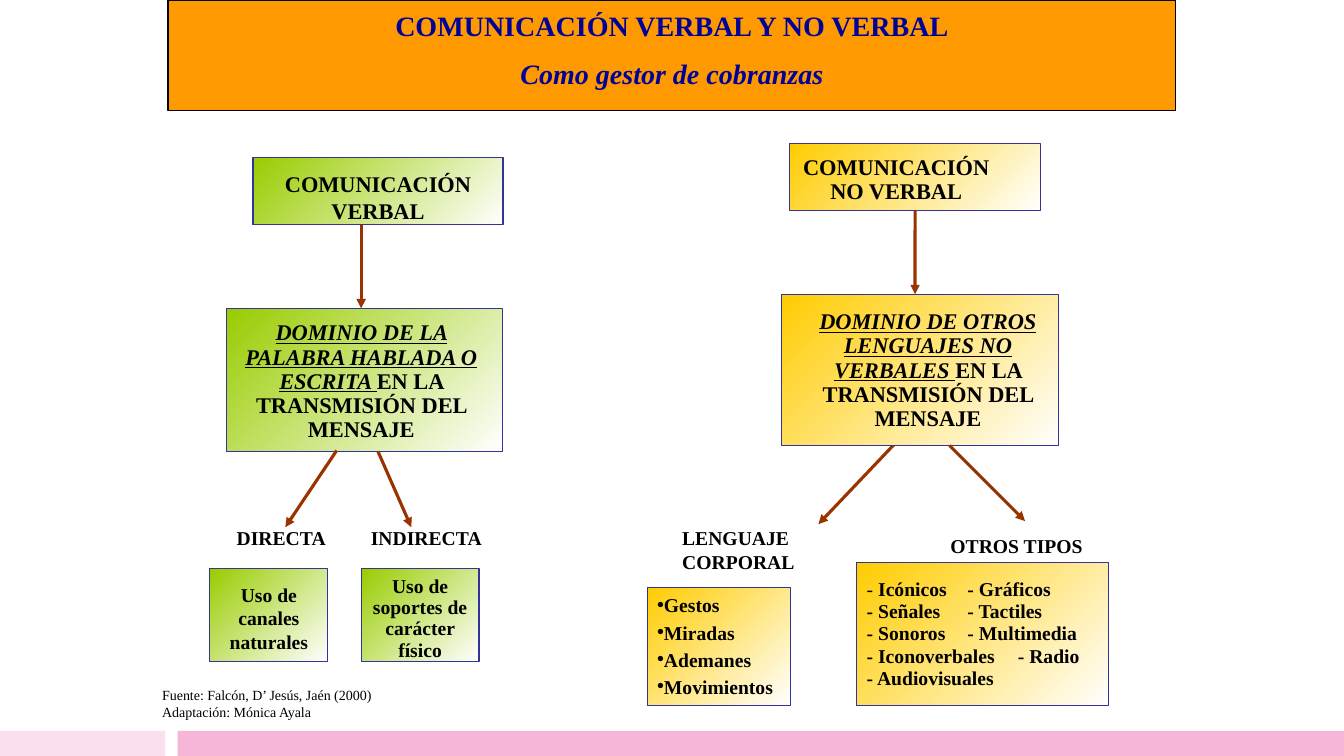
import dataclasses

import lxml.etree
import pptx
import pptx.dml.color
import pptx.enum.shapes
import pptx.enum.text
import pptx.oxml.ns
import pptx.util

Pt = pptx.util.Pt
qn = pptx.oxml.ns.qn
ALIGN = pptx.enum.text.PP_ALIGN
RECTANGLE = pptx.enum.shapes.MSO_SHAPE.RECTANGLE


@dataclasses.dataclass(frozen=True)
class Theme:
    font: str = "Times New Roman"
    title_size: float = 20
    head_size: float = 16
    body_size: float = 14
    note_size: float = 10
    paragraph_gap: float = 0.54  # share of the type size
    ink: str = "000000"
    navy: str = "000099"
    orange: str = "FF9900"
    green: str = "99CC00"
    yellow: str = "FFCC00"
    white: str = "FFFFFF"
    frame: str = "333399"
    arrow: str = "993300"
    pale_pink: str = "FBDFEE"
    pink: str = "F5B6D8"


THEME = Theme()
STRESSED = {"italic": True, "underline": True}


def color(value):
    return pptx.dml.color.RGBColor.from_string(value)


def write(shape, paragraphs, size=THEME.body_size, ink=THEME.ink, bold=True, align=ALIGN.LEFT,
          spacing=1.0, inset=(7.2, 3.6, 7.2), bullet=None, tabs=(), gap=None, right_indents=()):
    """Fill a shape; a paragraph is a string or a list of (text, font settings) runs."""
    frame = shape.text_frame
    frame.word_wrap = True
    frame.auto_size = pptx.enum.text.MSO_AUTO_SIZE.NONE
    frame.vertical_anchor = pptx.enum.text.MSO_ANCHOR.TOP
    frame.margin_left, frame.margin_top, frame.margin_right = map(Pt, inset)
    frame.margin_bottom = 0
    gap = THEME.paragraph_gap * size if gap is None else gap
    for index, content in enumerate(paragraphs):
        paragraph = frame.add_paragraph() if index else frame.paragraphs[0]
        paragraph.alignment = align
        paragraph.line_spacing = spacing
        paragraph.space_before = Pt(gap if index else 0)
        properties = paragraph._p.get_or_add_pPr()
        properties.set("marL", "0")
        properties.set("indent", "0")
        if index < len(right_indents):
            properties.set("marR", str(Pt(right_indents[index])))
        if bullet:
            lxml.etree.SubElement(properties, qn("a:buChar")).set("char", bullet)
        else:
            lxml.etree.SubElement(properties, qn("a:buNone"))
        if tabs:
            tab_list = lxml.etree.SubElement(properties, qn("a:tabLst"))
            for position in tabs:
                tab = lxml.etree.SubElement(tab_list, qn("a:tab"))
                tab.set("pos", str(Pt(position)))
                tab.set("algn", "l")
        for text, settings in [(content, {})] if isinstance(content, str) else content:
            run = paragraph.add_run()
            run.text = text
            run.font.name = THEME.font
            run.font.size = Pt(size)
            run.font.color.rgb = color(ink)
            for name, value in ({"bold": bold, "italic": False} | settings).items():
                setattr(run.font, name, value)


def place(shape, box):
    shape.left, shape.top, shape.width, shape.height = map(Pt, box)


def within(region, left, top, width, height):
    return region[0] + left, region[1] + top, width, height


def shade(shape, tint):
    """Diagonal blend from a tint to white, with a thin frame."""
    shape.fill.gradient()
    shape.fill.gradient_angle = 315
    for stop, value in zip(shape.fill.gradient_stops, (tint, THEME.white)):
        stop.color.rgb = color(value)
    shape.line.color.rgb = color(THEME.frame)
    shape.line.width = Pt(0.75)


def add_panel(slide, box, tint, paragraphs, **text_format):
    shape = slide.shapes.add_shape(RECTANGLE, *map(Pt, box))
    shape.shadow.inherit = False
    shade(shape, tint)
    write(shape, paragraphs, **text_format)
    return shape


def add_label(slide, box, paragraphs, **text_format):
    write(slide.shapes.add_textbox(*map(Pt, box)), paragraphs, **text_format)


def add_arrow(slide, region, start, end):
    points = [Pt(region[axis] + point[axis]) for point in (start, end) for axis in (0, 1)]
    connector = slide.shapes.add_connector(pptx.enum.shapes.MSO_CONNECTOR.STRAIGHT, *points)
    connector.line.color.rgb = color(THEME.arrow)
    connector.line.width = Pt(2.25)
    lxml.etree.SubElement(connector.line._get_or_add_ln(), qn("a:tailEnd")).set("type", "triangle")
    lxml.etree.SubElement(connector._element.spPr, qn("a:effectLst"))
    return connector


def build_header(slide, box):
    title = slide.shapes.title
    place(title, box)
    title.fill.solid()
    title.fill.fore_color.rgb = color(THEME.orange)
    title.line.color.rgb = color(THEME.ink)
    title.line.width = Pt(0.75)
    write(title, ["COMUNICACIÓN VERBAL Y NO VERBAL",
                  [("Como gestor de cobranzas", {"italic": True})]],
          size=THEME.title_size, ink=THEME.navy, align=ALIGN.CENTER, inset=(7.2, 5.8, 7.2))


def build_verbal_branch(slide, region):
    # Heading and domain
    add_panel(slide, within(region, 30.7, 0, 178.6, 48.2), THEME.green, ["COMUNICACIÓN VERBAL"],
              size=THEME.head_size, align=ALIGN.CENTER, inset=(0, 9.4, 0))
    add_panel(slide, within(region, 12, 108, 197.3, 102.2), THEME.green,
              [[("DOMINIO DE LA PALABRA HABLADA O ESCRITA ", STRESSED),
                ("EN LA TRANSMISIÓN DEL MENSAJE", {})]],
              size=THEME.head_size, align=ALIGN.CENTER, spacing=0.9, inset=(1.4, 9.4, 6.5))
    for start, end in (((108, 48.2), (108, 108)), ((90.5, 209.5), (53.8, 264.3)),
                       ((120, 210.2), (143.8, 264.3))):
        add_arrow(slide, region, start, end)

    # Direct and indirect use
    uses = (("DIRECTA", 12, "Uso de canales naturales", 1, 10.1),
            ("INDIRECTA", 107.8, "Uso de soportes de carácter físico", 0.9, 5.8))
    for index, (label, label_left, text, spacing, top_inset) in enumerate(uses):
        add_label(slide, within(region, label_left, 260, 95.8, 23.8), [label])
        add_panel(slide, within(region, 108 * index, 293.8, 84.2, 66.2), THEME.green, [text],
                  align=ALIGN.CENTER, spacing=spacing, inset=(7.2, top_inset, 7.2))


def build_nonverbal_branch(slide, region):
    # Heading and domain
    add_arrow(slide, region, (190.8, 200.2), (122.4, 272.2))
    heading = add_panel(slide, within(region, 101.8, 0, 179.3, 48.2), THEME.yellow,
                        ["COMUNICACIÓN", "NO VERBAL"], size=THEME.head_size, align=ALIGN.CENTER,
                        spacing=0.9, inset=(7, 9.4, 1), gap=0, right_indents=(33,))
    add_panel(slide, within(region, 95.8, 108, 198, 108), THEME.yellow,
              [[("DOMINIO DE OTROS LENGUAJES NO VERBALES ", STRESSED),
                ("EN LA TRANSMISIÓN DEL MENSAJE", {})]],
              size=THEME.head_size, align=ALIGN.CENTER, spacing=0.9, inset=(13, 11.6, 1.4))
    add_arrow(slide, region, (191.4, 48.2), (191.4, 108)).begin_connect(heading, 2)
    add_arrow(slide, region, (216, 216), (270, 270))

    # Body language
    add_label(slide, within(region, 18, 270, 95.8, 41), ["LENGUAJE CORPORAL"])
    gestures = slide.placeholders[1]
    place(gestures, within(region, 0, 317.6, 102.2, 84.2))
    shade(gestures, THEME.yellow)
    write(gestures, ["Gestos", "Miradas", "Ademanes", "Movimientos"],
          spacing=0.7, inset=(7.2, 8.6, 7.2), bullet="•")

    # Other types, in two tabbed columns
    add_label(slide, within(region, 209.6, 275.8, 120.2, 23.8), ["OTROS TIPOS"])
    add_panel(slide, within(region, 149.8, 299.6, 180, 102.2), THEME.yellow,
              [[("- ", {"bold": False}), ("Icónicos\t- Gráficos", {})], "- Señales\t- Tactiles",
               "- Sonoros\t- Multimedia", "- Iconoverbales\t- Radio", "- Audiovisuales"],
              spacing=0.5, inset=(7.2, 17.2, 0), tabs=(81.5, 98))


def build_footer(slide, box):
    left, top, width, height = box
    for offset, bar_width, tint in ((0, 118, THEME.pale_pink), (127, width - 127, THEME.pink)):
        bar = slide.shapes.add_shape(RECTANGLE, *map(Pt, (left + offset, top, bar_width, height)))
        bar.shadow.inherit = False
        bar.fill.solid()
        bar.fill.fore_color.rgb = color(tint)
        bar.line.fill.background()


def main():
    presentation = pptx.Presentation()
    presentation.slide_width, presentation.slide_height = Pt(960), Pt(540)
    slide = presentation.slides.add_slide(presentation.slide_layouts[1])
    build_footer(slide, (0, 522, 960, 18))
    build_header(slide, (120, 0, 720, 79))
    build_verbal_branch(slide, (150, 112.3))
    build_nonverbal_branch(slide, (462.2, 102.2))
    # Source note
    add_label(slide, (108.7, 486.7, 221.8, 31),
              ["Fuente: Falcón, D’ Jesús, Jaén (2000)", "Adaptación: Mónica Ayala"],
              size=THEME.note_size, bold=False, gap=0)
    presentation.save("out.pptx")


if __name__ == "__main__":
    main()
